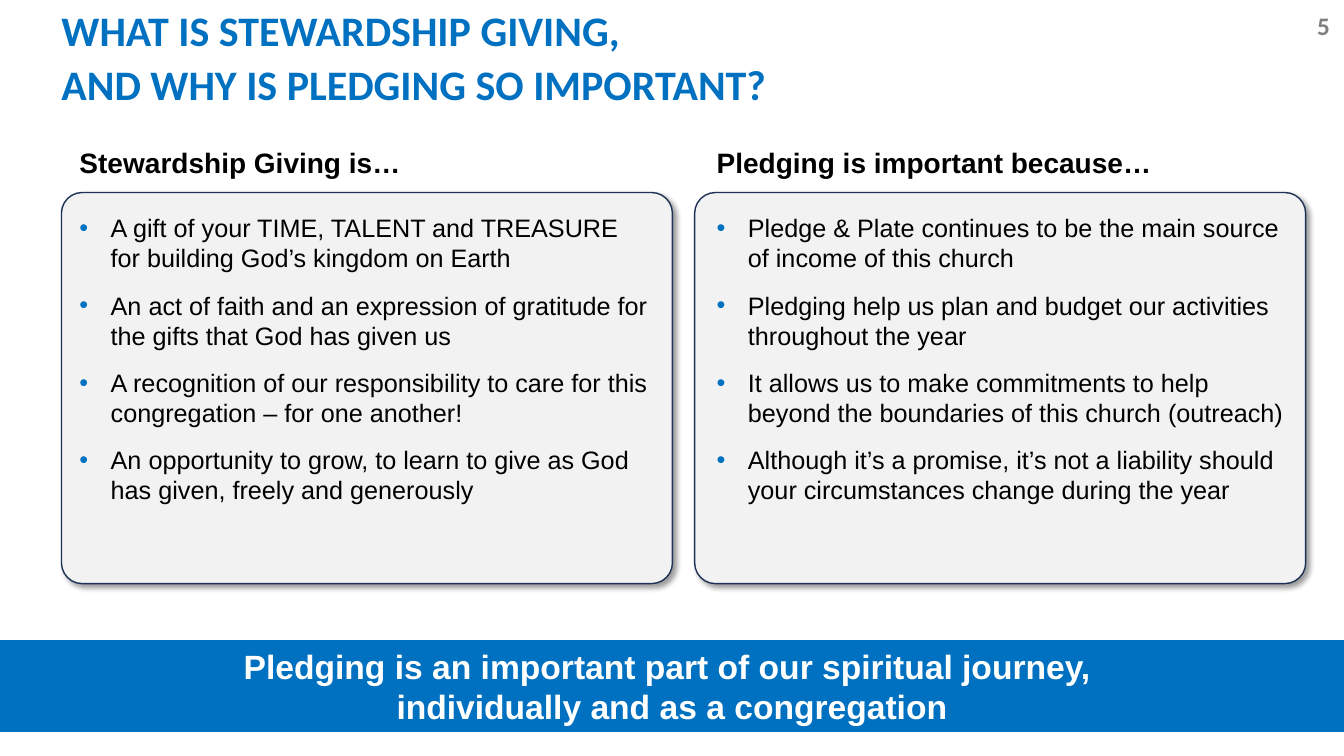
from lxml import etree
from pptx import Presentation
from pptx.dml.color import RGBColor
from pptx.enum.shapes import MSO_SHAPE
from pptx.enum.text import MSO_ANCHOR, MSO_AUTO_SIZE, PP_ALIGN
from pptx.oxml import parse_xml
from pptx.oxml.ns import nsdecls, qn
from pptx.util import Inches, Pt

RECTANGLE, ROUNDED = MSO_SHAPE.RECTANGLE, MSO_SHAPE.ROUNDED_RECTANGLE
TOP, MIDDLE, BOTTOM = MSO_ANCHOR.TOP, MSO_ANCHOR.MIDDLE, MSO_ANCHOR.BOTTOM
LEFT, CENTER, RIGHT = PP_ALIGN.LEFT, PP_ALIGN.CENTER, PP_ALIGN.RIGHT
NO_AUTOFIT = MSO_AUTO_SIZE.NONE
TITLE_ONLY = 5

BLUE, NAVY, PALE = "0070C0", "1E3256", "F2F2F2"
BLACK, WHITE, GRAY = "000000", "FFFFFF", "808080"

TITLE = ["WHAT IS STEWARDSHIP GIVING,", "AND WHY IS PLEDGING SO IMPORTANT?"]
BANNER = [
    "Pledging is an important part of our spiritual journey, ",
    "individually and as a congregation",
]
# Panel left, text left, heading, bullets
COLUMNS = [
    (0.61, 0.69, "Stewardship Giving is…", [
        "A gift of your TIME, TALENT and TREASURE for building God’s kingdom on Earth",
        "An act of faith and an expression of gratitude for the gifts that God has given us",
        "A recognition of our responsibility to care for this congregation – for one another!",
        "An opportunity to grow, to learn to give as God has given, freely and generously",
    ]),
    (6.89, 7.01, "Pledging is important because…", [
        "Pledge & Plate continues to be the main source of income of this church",
        "Pledging help us plan and budget our activities throughout the year",
        "It allows us to make commitments to help beyond the boundaries of this church (outreach)",
        "Although it’s a promise, it’s not a liability should your circumstances change during the year",
    ]),
]


def rgb(value):
    return RGBColor.from_string(value)


def inches(*lengths):
    return [Inches(length) for length in lengths]


def add_bullet(para):
    properties = para._p.get_or_add_pPr()
    properties.set("marL", str(Inches(0.31)))
    properties.set("indent", str(Inches(-0.31)))
    color = etree.SubElement(properties, qn("a:buClr"))
    etree.SubElement(color, qn("a:srgbClr"), val=BLUE)
    etree.SubElement(properties, qn("a:buFont"), typeface="Arial")
    etree.SubElement(properties, qn("a:buChar"), char="•")


def write(box, lines, size, color, font="Arial", bold=True, align=LEFT,
          anchor=MIDDLE, before=0, after=0, spacing=None, bullets=False):
    """Fill the text frame of a shape, one paragraph for each line."""
    frame = box.text_frame
    frame.word_wrap = True
    frame.auto_size = NO_AUTOFIT
    frame.vertical_anchor = anchor
    for index, line in enumerate(lines):
        para = frame.add_paragraph() if index else frame.paragraphs[0]
        if bullets:
            add_bullet(para)
        para.alignment = align
        para.space_before = Pt(before if index else 0)
        para.space_after = Pt(after)
        para.line_spacing = spacing
        span = para.add_run()
        span.text = line
        span.font.name = font
        span.font.size = Pt(size)
        span.font.bold = bold
        span.font.color.rgb = rgb(color)


def add_text(shapes, area, lines, size, color, **style):
    write(shapes.add_textbox(*inches(*area)), lines, size, color, **style)


def add_block(shapes, kind, area, fill):
    block = shapes.add_shape(kind, *inches(*area))
    block.shadow.inherit = False
    block.fill.solid()
    block.fill.fore_color.rgb = rgb(fill)
    block.line.fill.background()
    return block


def add_panel(shapes, area):
    """Add a rounded, outlined block with a soft shadow."""
    panel = add_block(shapes, ROUNDED, area, PALE)
    panel.adjustments[0] = 0.053
    panel.line.color.rgb = rgb(NAVY)
    panel.line.width = Pt(1)
    effects = panel._element.spPr.find(qn("a:effectLst"))
    effects.append(parse_xml(
        f'<a:outerShdw {nsdecls("a")} blurRad="{Pt(4)}" dist="{Pt(3)}" '
        f'dir="{45 * 60000}" algn="tl" rotWithShape="0">'
        f'<a:srgbClr val="{BLACK}"><a:alpha val="40000"/></a:srgbClr>'
        '</a:outerShdw>'))


def add_column(page, panel_left, text_left, heading, points):
    shapes = page.shapes.add_group_shape().shapes
    add_panel(shapes, (panel_left, 1.91, 6.06, 3.88))
    add_text(shapes, (text_left, 1.36, 5.84, 0.51), [heading], 20, BLACK)
    add_text(shapes, (text_left, 2.06, 5.84, 3.5), points, 18, BLACK,
             bold=False, anchor=TOP, before=6, after=6, bullets=True)


def add_title(page, area, lines):
    title = page.shapes.title
    title.left, title.top, title.width, title.height = inches(*area)
    write(title, lines, 30, BLUE, font="Calibri", anchor=BOTTOM,
          before=6, spacing=0.9)


def main():
    deck = Presentation()
    deck.slide_width, deck.slide_height = inches(13.33, 7.5)
    page = deck.slides.add_slide(deck.slide_layouts[TITLE_ONLY])

    add_title(page, (0.51, 0.03, 12.78, 1.11), TITLE)
    for column in COLUMNS:
        add_column(page, *column)
    banner = add_block(page.shapes, RECTANGLE, (0, 6.35, 13.33, 0.91), BLUE)
    write(banner, BANNER, 24, WHITE, align=CENTER)
    add_text(page.shapes, (10.29, 0.05, 3, 0.4), ["5"], 18, GRAY,
             font="Calibri", align=RIGHT)

    deck.save("out.pptx")


if __name__ == "__main__":
    main()
